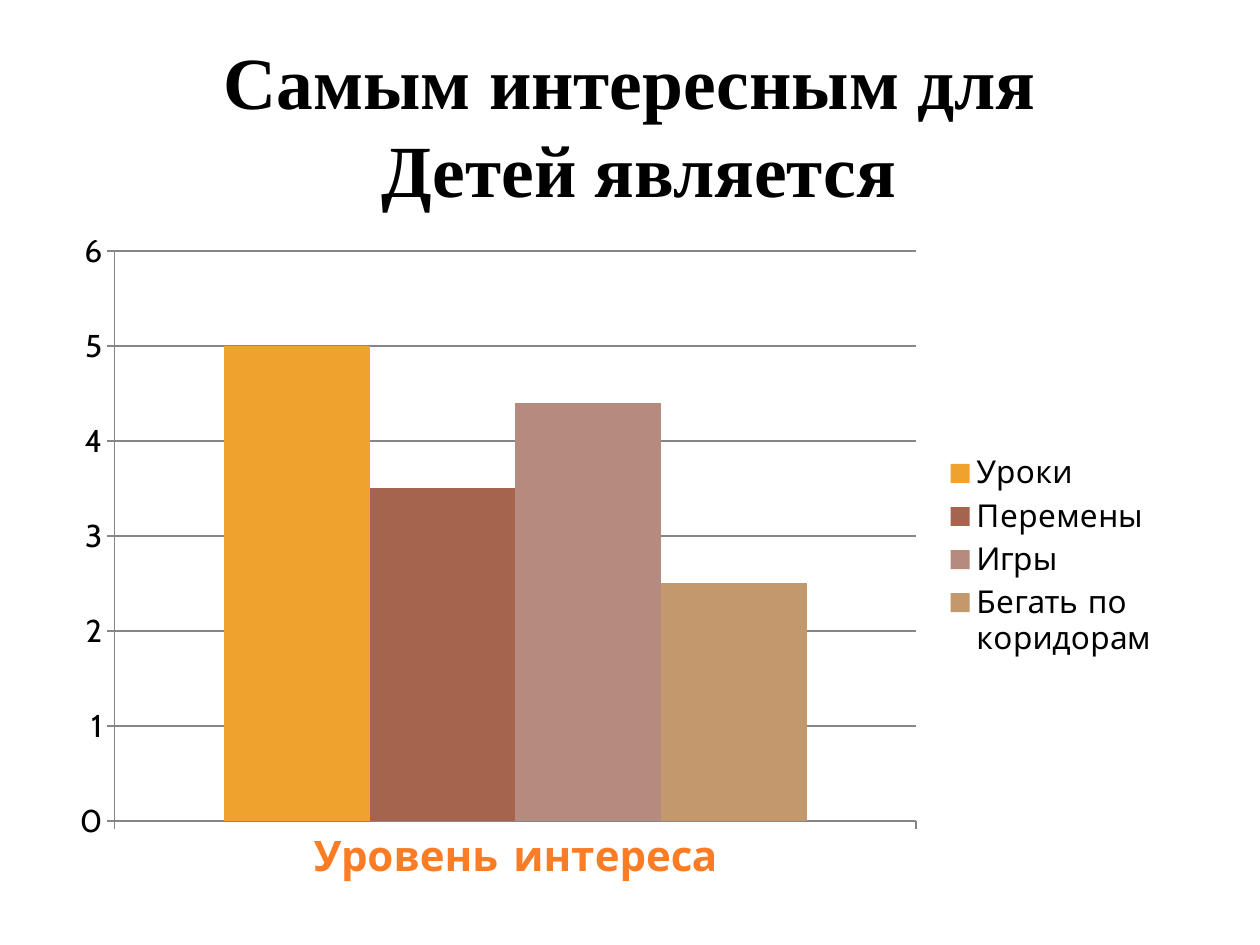
from dataclasses import dataclass
from lxml import etree
from pptx import Presentation
from pptx import util as u
from pptx.chart.data import CategoryChartData
from pptx.dml.color import RGBColor
from pptx.enum import chart as ch
from pptx.enum import text

PX = 914400 // 126
HAND = "Comic Neue"


@dataclass
class Bar:
    name: str
    value: float
    color: str


BARS = [
    Bar("Уроки", 5, "F0A22E"),
    Bar("Перемены", 3.5, "A5644E"),
    Bar("Игры", 4.4, "B58B80"),
    Bar("Бегать по коридорам", 2.5, "C3986D"),
]


def px(*sizes: int) -> list[int]:
    return [u.Emu(size * PX) for size in sizes]


def rgb(color: str) -> RGBColor:
    return RGBColor.from_string(color)


def style(item, **values) -> None:
    for name, value in values.items():
        setattr(item, name, value)


def font(item, face: str, size: int, color: str = "000000", bold: bool = False) -> None:
    style(item, name=face, size=u.Pt(size), bold=bold)
    item.color.rgb = rgb(color)


def add_title(slide) -> None:
    title = slide.shapes.title
    left, top, width, height = px(207, 29, 864, 190)
    style(title, left=left, top=top, width=width, height=height)
    frame = title.text_frame
    style(frame, word_wrap=False, auto_size=text.MSO_AUTO_SIZE.NONE,
          vertical_anchor=text.MSO_ANCHOR.MIDDLE)
    frame.text = "Самым интересным для \nДетей является"
    for para in frame.paragraphs:
        style(para, alignment=text.PP_ALIGN.CENTER, line_spacing=1.0, space_before=u.Pt(0))
        font(para.runs[0].font, "Times New Roman", 42, bold=True)


def set_plot(chart, **parts: float) -> None:
    """Fix the inner plot area as fractions of the chart."""
    area = chart._chartSpace.chart.plotArea
    space = area.nsmap["c"]
    for old in area.findall(f"{{{space}}}layout"):
        area.remove(old)
    layout = etree.Element(f"{{{space}}}layout")
    manual = etree.SubElement(layout, f"{{{space}}}manualLayout")
    values = {"layoutTarget": "inner", "xMode": "edge", "yMode": "edge", **parts}
    for name, value in values.items():
        etree.SubElement(manual, f"{{{space}}}{name}").set("val", str(value))
    area.insert(0, layout)


def add_bars(slide) -> None:
    data = CategoryChartData()
    data.categories = ["Уровень интереса"]
    for bar in BARS:
        data.add_series(bar.name, [bar.value])
    kind = ch.XL_CHART_TYPE.COLUMN_CLUSTERED
    chart = slide.shapes.add_chart(kind, *px(59, 217, 1113, 679), data).chart
    style(chart, has_title=False, has_legend=True)
    font(chart.font, "Cabin", 18)

    plot = chart.plots[0]
    style(plot, gap_width=150, overlap=0, vary_by_categories=False)
    for bar, series in zip(BARS, plot.series):
        series.format.fill.solid()
        series.format.fill.fore_color.rgb = rgb(bar.color)

    cat, val = chart.category_axis, chart.value_axis
    style(val, minimum_scale=0, maximum_scale=6, major_unit=1, has_major_gridlines=True)
    for axis in (cat, val):
        axis.major_tick_mark = ch.XL_TICK_MARK.OUTSIDE
    for part in (cat, val, val.major_gridlines):
        part.format.line.color.rgb = rgb("868686")
        part.format.line.width = u.Pt(0.75)
    font(cat.tick_labels.font, HAND, 24, "FA7D26", True)
    font(val.tick_labels.font, "Cabin", 18)

    style(chart.legend, position=ch.XL_LEGEND_POSITION.RIGHT, include_in_layout=False)
    font(chart.legend.font, HAND, 18)
    set_plot(chart, x=0.05, y=0.05, w=0.72, h=0.84)


def main() -> None:
    deck = Presentation()
    style(deck, slide_width=u.Inches(10), slide_height=u.Inches(7.5))
    slide = deck.slides.add_slide(deck.slide_layouts[5])
    add_title(slide)
    add_bars(slide)
    deck.save("out.pptx")


if __name__ == "__main__":
    main()
